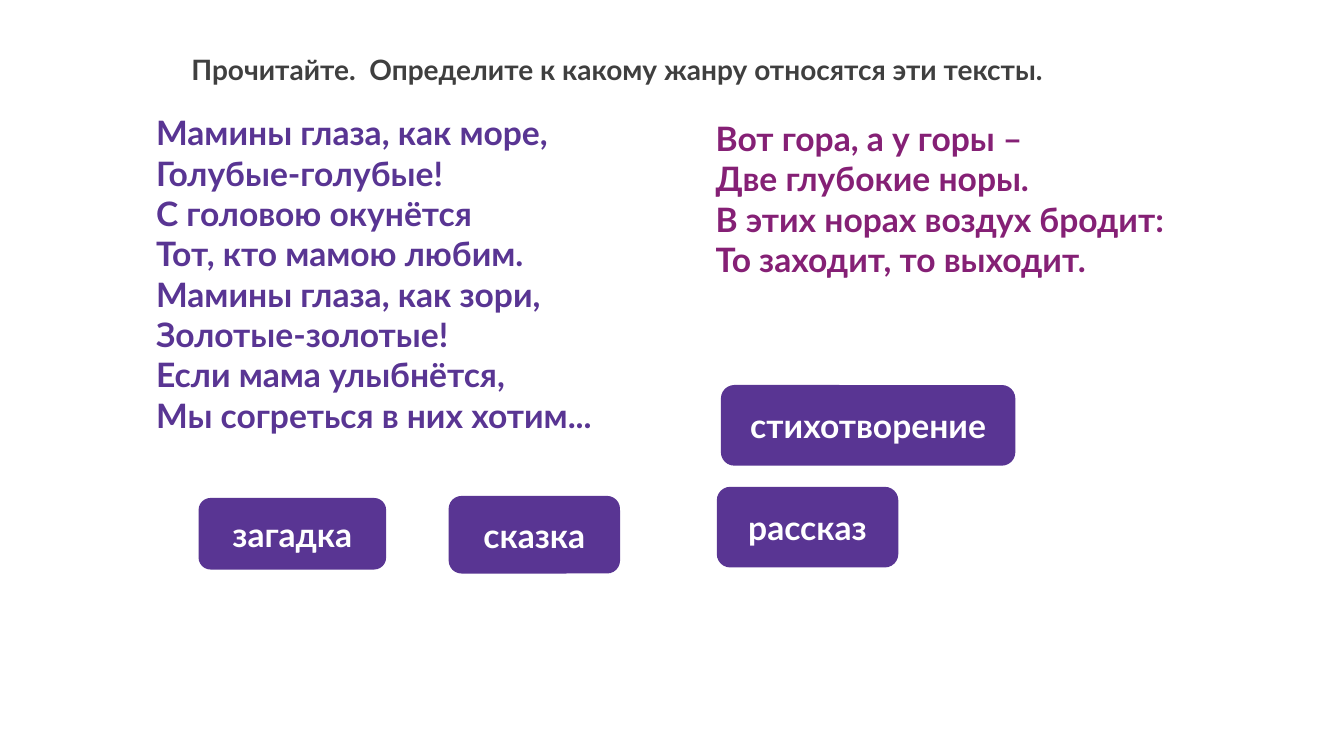
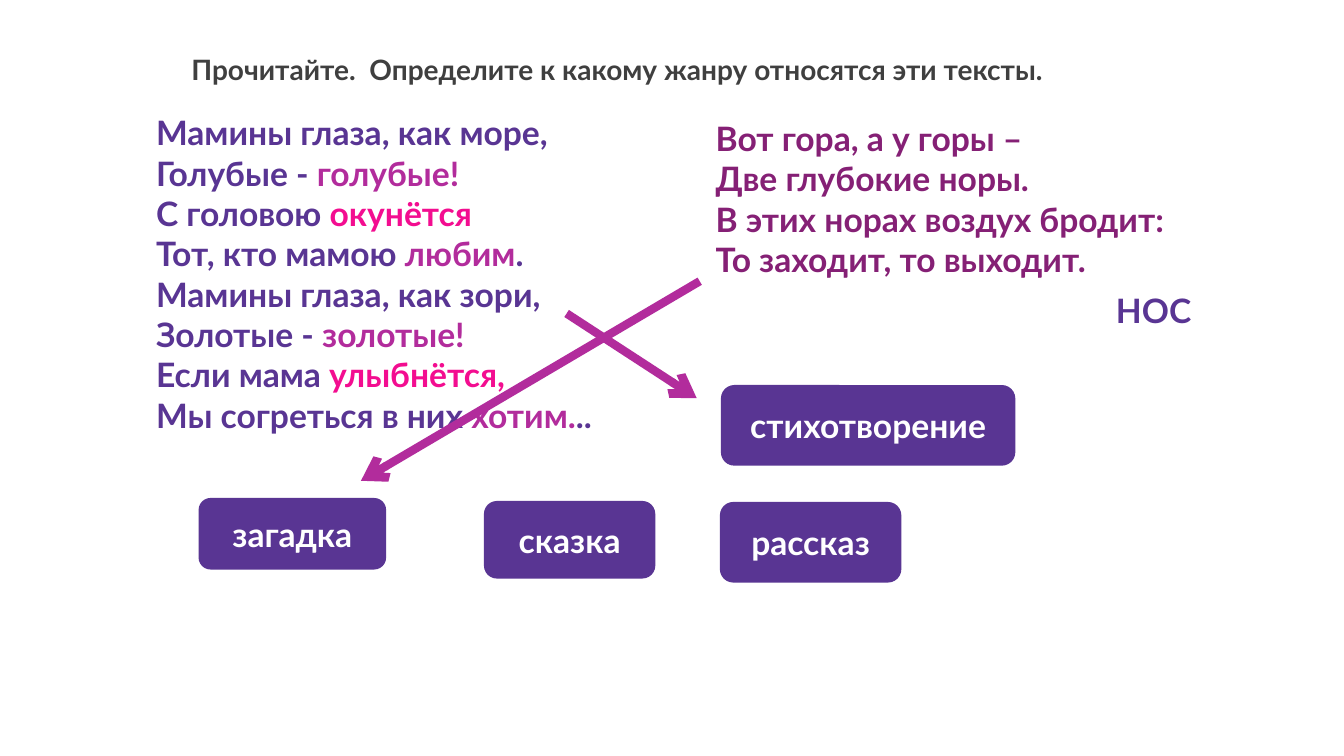
"""Build two slides of a reading exercise about literary genres."""

from dataclasses import dataclass
from typing import NamedTuple

from lxml.etree import SubElement
from pptx import Presentation
from pptx.dml.color import RGBColor
from pptx.enum.shapes import MSO_CONNECTOR, MSO_SHAPE
from pptx.enum.text import MSO_ANCHOR, PP_ALIGN
from pptx.oxml.ns import qn
from pptx.slide import Slide
from pptx.text.text import TextFrame
from pptx.util import Inches, Pt


@dataclass(frozen=True)
class Theme:
    font: str = "Lato"
    heading: RGBColor = RGBColor(0x3F, 0x3F, 0x3F)
    violet: RGBColor = RGBColor(0x59, 0x35, 0x93)
    plum: RGBColor = RGBColor(0x85, 0x20, 0x75)
    magenta: RGBColor = RGBColor(0xB2, 0x2C, 0x9C)
    pink: RGBColor = RGBColor(0xF3, 0x0D, 0x90)
    white: RGBColor = RGBColor(0xFF, 0xFF, 0xFF)
    heading_size: int = 20
    body_size: int = 24
    arrow_width: int = 6


THEME = Theme()


class Box(NamedTuple):
    left: float
    top: float
    width: float
    height: float


class Accent(NamedTuple):
    text: str
    color: RGBColor


class Genre(NamedTuple):
    name: str
    box: Box


class Arrow(NamedTuple):
    start: tuple[float, float]
    end: tuple[float, float]


Line = tuple[str | Accent, ...]

HEADING: list[Line] = [("Прочитайте.  Определите к какому жанру относятся эти тексты.",)]
RIDDLE: list[Line] = [
    ("Вот гора, а у горы –",),
    ("Две глубокие норы.",),
    ("В этих норах воздух бродит:",),
    ("То заходит, то выходит.",),
]
POEM: list[Line] = [
    ("Мамины глаза, как море,",),
    ("Голубые-голубые!",),
    ("С головою окунётся",),
    ("Тот, кто мамою любим.",),
    ("Мамины глаза, как зори,",),
    ("Золотые-золотые!",),
    ("Если мама улыбнётся,",),
    ("Мы согреться в них хотим...",),
]
RHYMED_POEM: list[Line] = [
    POEM[0],
    ("Голубые - ", Accent("голубые!", THEME.magenta)),
    ("С головою ", Accent("окунётся", THEME.pink)),
    ("Тот, кто мамою ", Accent("любим", THEME.magenta), "."),
    POEM[4],
    ("Золотые - ", Accent("золотые!", THEME.magenta)),
    ("Если мама ", Accent("улыбнётся,", THEME.pink)),
    ("Мы согреться в них ", Accent("хотим.", THEME.magenta), ".."),
]
FIXED_GENRES = [
    Genre("стихотворение", Box(7.15, 3.82, 2.92, 0.8)),
    Genre("загадка", Box(1.97, 4.94, 1.86, 0.71)),
]
TASK_GENRES = [
    Genre("рассказ", Box(7.11, 4.83, 1.8, 0.8)),
    Genre("сказка", Box(4.45, 4.92, 1.7, 0.77)),
]
ANSWER_GENRES = [
    Genre("рассказ", Box(7.14, 4.98, 1.8, 0.8)),
    Genre("сказка", Box(4.8, 4.97, 1.7, 0.77)),
]
ANSWER_ARROWS = [
    Arrow((5.62, 3.11), (6.91, 3.95)),
    Arrow((6.94, 2.79), (3.58, 4.77)),
]


def write_lines(
    frame: TextFrame,
    lines: list[Line],
    *,
    color: RGBColor,
    size: int = THEME.body_size,
    align: PP_ALIGN = PP_ALIGN.LEFT,
    anchor: MSO_ANCHOR = MSO_ANCHOR.TOP,
) -> None:
    frame.word_wrap = True
    frame.vertical_anchor = anchor
    for index, line in enumerate(lines):
        paragraph = frame.add_paragraph() if index else frame.paragraphs[0]
        paragraph.alignment = align
        for part in line:
            accent = part if isinstance(part, Accent) else Accent(part, color)
            run = paragraph.add_run()
            run.text = accent.text
            run.font.name = THEME.font
            run.font.size = Pt(size)
            run.font.bold = True
            run.font.color.rgb = accent.color


def add_text(
    slide: Slide,
    lines: list[Line],
    box: Box,
    *,
    color: RGBColor,
    size: int = THEME.body_size,
    anchor: MSO_ANCHOR = MSO_ANCHOR.TOP,
) -> None:
    shape = slide.shapes.add_textbox(*map(Inches, box))
    write_lines(shape.text_frame, lines, color=color, size=size, anchor=anchor)


def add_genre(slide: Slide, genre: Genre) -> None:
    shape = slide.shapes.add_shape(MSO_SHAPE.ROUNDED_RECTANGLE, *map(Inches, genre.box))
    shape.shadow.inherit = False
    shape.fill.solid()
    shape.fill.fore_color.rgb = THEME.violet
    shape.line.fill.background()
    write_lines(
        shape.text_frame,
        [(genre.name,)],
        color=THEME.white,
        align=PP_ALIGN.CENTER,
        anchor=MSO_ANCHOR.MIDDLE,
    )


def add_arrow(slide: Slide, arrow: Arrow) -> None:
    connector = slide.shapes.add_connector(
        MSO_CONNECTOR.STRAIGHT, *map(Inches, arrow.start + arrow.end)
    )
    connector.line.color.rgb = THEME.magenta
    connector.line.width = Pt(THEME.arrow_width)
    SubElement(connector.line._get_or_add_ln(), qn("a:tailEnd"), type="arrow")
    SubElement(connector._element.spPr, qn("a:effectLst"))


def add_exercise(presentation: Presentation, poem: list[Line], genres: list[Genre]) -> Slide:
    slide = presentation.slides.add_slide(presentation.slide_layouts[6])
    add_text(
        slide, poem, Box(1.45, 1.05, 5.24, 3.33), color=THEME.violet, anchor=MSO_ANCHOR.MIDDLE
    )
    add_text(
        slide, HEADING, Box(1.8, 0.47, 10.12, 0.44), color=THEME.heading, size=THEME.heading_size
    )
    add_text(slide, RIDDLE, Box(7, 1.12, 5.22, 1.72), color=THEME.plum)
    for genre in genres + FIXED_GENRES:
        add_genre(slide, genre)
    return slide


def main() -> None:
    presentation = Presentation()
    presentation.slide_width = Inches(13.33)
    presentation.slide_height = Inches(7.5)
    add_exercise(presentation, POEM, TASK_GENRES)
    answer = add_exercise(presentation, RHYMED_POEM, ANSWER_GENRES)
    for arrow in ANSWER_ARROWS:
        add_arrow(answer, arrow)
    add_text(answer, [("НОС",)], Box(10.97, 2.83, 1, 0.5), color=THEME.violet)
    presentation.save("out.pptx")


if __name__ == "__main__":
    main()
